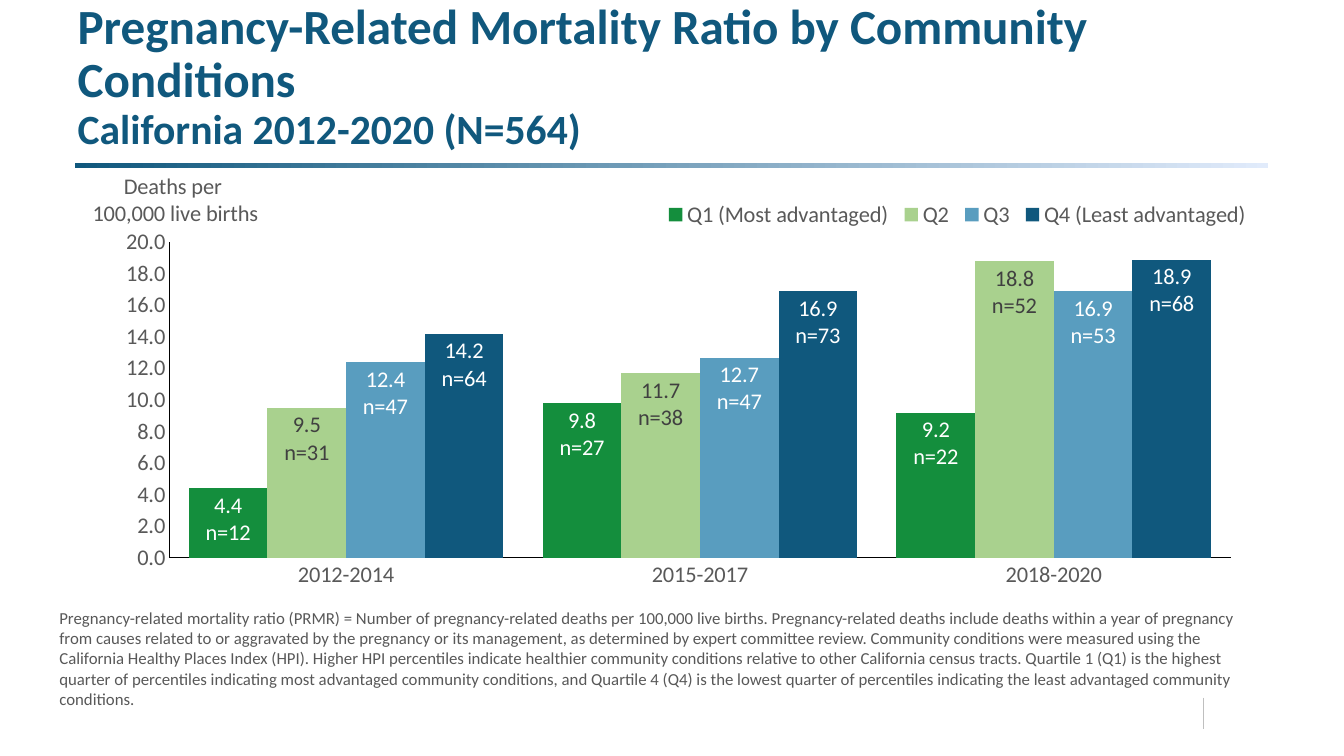
from lxml import etree
from pptx import Presentation
from pptx.chart.data import CategoryChartData
from pptx.dml.color import RGBColor
from pptx.enum.chart import XL_CHART_TYPE, XL_LABEL_POSITION, XL_LEGEND_POSITION, XL_TICK_MARK
from pptx.enum.shapes import MSO_CONNECTOR, MSO_SHAPE
from pptx.enum.text import MSO_ANCHOR, MSO_AUTO_SIZE, PP_ALIGN
from pptx.oxml.ns import qn
from pptx.util import Inches, Pt

FONT = "Calibri"
NAVY = RGBColor(0x10, 0x58, 0x7D)
PALE_BLUE = RGBColor(0xE1, 0xEB, 0xFB)
GREEN = RGBColor(0x14, 0x8E, 0x3D)
LIGHT_GREEN = RGBColor(0xA9, 0xD1, 0x8E)
BLUE = RGBColor(0x59, 0x9D, 0xBF)
WHITE = RGBColor(0xFF, 0xFF, 0xFF)
BLACK = RGBColor(0, 0, 0)
DARK_GRAY = RGBColor(0x40, 0x40, 0x40)
NOTE_GRAY = RGBColor(0x58, 0x58, 0x58)
AXIS_GRAY = RGBColor(0x59, 0x59, 0x59)
RULE_GRAY = RGBColor(0xBF, 0xBF, 0xBF)

# Content
TITLE = "Pregnancy-Related Mortality Ratio by Community Conditions "
SUBTITLE = "California 2012-2020 (N=564)"
AXIS_TITLE = ["Deaths per ", "100,000 live births"]
PERIODS = ["2012-2014", "2015-2017", "2018-2020"]
# name, ratios, death counts, bar colour, label colour
QUARTILES = [
    ("Q1 (Most advantaged)", [4.4, 9.8, 9.2], [12, 27, 22], GREEN, WHITE),
    ("Q2", [9.5, 11.7, 18.8], [31, 38, 52], LIGHT_GREEN, DARK_GRAY),
    ("Q3", [12.4, 12.7, 16.9], [47, 47, 53], BLUE, WHITE),
    ("Q4 (Least advantaged)", [14.2, 16.9, 18.9], [64, 73, 68], NAVY, WHITE),
]
FOOTNOTE = (
    "Pregnancy-related mortality ratio (PRMR) = Number of pregnancy-related deaths per 100,000 "
    "live births. Pregnancy-related deaths include deaths within a year of pregnancy from causes "
    "related to or aggravated by the pregnancy or its management, as determined by expert "
    "committee review. Community conditions were measured using the California Healthy Places "
    "Index (HPI). Higher HPI percentiles indicate healthier community conditions relative to "
    "other California census tracts. Quartile 1 (Q1) is the highest quarter of percentiles "
    "indicating most advantaged community conditions, and Quartile 4 (Q4) is the lowest quarter "
    "of percentiles indicating the least advantaged community conditions."
)


def style(font, size, color, bold=False):
    font.name, font.size, font.bold = FONT, Pt(size), bold
    font.color.rgb = color


def add_run(paragraph, text, size, color, bold=False):
    run = paragraph.add_run()
    run.text = text
    style(run.font, size, color, bold)


def fill_lines(text_frame, lines, size, color):
    for index, line in enumerate(lines):
        paragraph = text_frame.add_paragraph() if index else text_frame.paragraphs[0]
        paragraph.alignment = PP_ALIGN.CENTER
        add_run(paragraph, line, size, color)


def set_layout(parent, index, inner=False, **fractions):
    """Place a chart part by fractions of the chart's width and height."""
    for old in parent.findall(qn("c:layout")):
        parent.remove(old)
    layout = etree.Element(qn("c:layout"))
    manual = etree.SubElement(layout, qn("c:manualLayout"))
    settings = [("layoutTarget", "inner")] if inner else []
    settings += [("xMode", "edge"), ("yMode", "edge")] + list(fractions.items())
    for name, value in settings:
        etree.SubElement(manual, qn("c:" + name)).set("val", str(value))
    parent.insert(index, layout)


def add_title(slide):
    title = slide.shapes.title
    title.left, title.top = Inches(0.67), Inches(0.36)
    title.width, title.height = Inches(12.09), Inches(1.21)
    frame = title.text_frame
    frame.word_wrap = True
    frame.auto_size = MSO_AUTO_SIZE.NONE
    frame.vertical_anchor = MSO_ANCHOR.BOTTOM
    paragraph = frame.paragraphs[0]
    paragraph.alignment = PP_ALIGN.LEFT
    paragraph.line_spacing = 0.9
    add_run(paragraph, TITLE, 35.1, NAVY, True)
    paragraph.add_line_break()
    add_run(paragraph, SUBTITLE, 29.7, NAVY, True)


def add_rules(slide):
    bar = slide.shapes.add_shape(
        MSO_SHAPE.RECTANGLE, Inches(0.74), Inches(1.62), Inches(11.84), Inches(0.05))
    bar.shadow.inherit = False
    bar.line.fill.background()
    bar.fill.gradient()
    bar.fill.gradient_angle = 0
    for stop, color in zip(bar.fill.gradient_stops, (NAVY, PALE_BLUE)):
        stop.color.rgb = color
    divider = slide.shapes.add_connector(
        MSO_CONNECTOR.STRAIGHT, Inches(11.94), Inches(6.92), Inches(11.94), Inches(7.23))
    divider.line.color.rgb = RULE_GRAY
    divider.line.width = Pt(0.5)
    etree.SubElement(divider.element.spPr, qn("a:effectLst"))


def add_footnote(slide):
    box = slide.shapes.add_textbox(Inches(0.49), Inches(5.98), Inches(12.09), Inches(0.91))
    box.text_frame.word_wrap = True
    add_run(box.text_frame.paragraphs[0], FOOTNOTE, 12, NOTE_GRAY)


def add_ratio_chart(slide):
    data = CategoryChartData(number_format="0.0")
    data.categories = PERIODS
    for name, ratios, *_ in QUARTILES:
        data.add_series(name, ratios)
    chart = slide.shapes.add_chart(
        XL_CHART_TYPE.COLUMN_CLUSTERED, Inches(0.77), Inches(1.63),
        Inches(11.79), Inches(4.35), data).chart
    style(chart.font, 16, BLACK)
    chart.has_title = False
    plot = chart.plots[0]
    plot.gap_width, plot.overlap, plot.vary_by_categories = 50, 0, False
    plot_area = chart.element.find(".//" + qn("c:plotArea"))
    set_layout(plot_area, 0, inner=True, x=0.077, y=0.178, w=0.893, h=0.72)

    # Bars and their two-line labels
    for series, (_, ratios, counts, bar_color, label_color) in zip(plot.series, QUARTILES):
        series.format.fill.solid()
        series.format.fill.fore_color.rgb = bar_color
        labels = series.data_labels
        labels.show_value = True
        labels.number_format, labels.number_format_is_linked = "0.0", False
        labels.position = XL_LABEL_POSITION.INSIDE_END
        style(labels.font, 16, label_color)
        for index, (ratio, count) in enumerate(zip(ratios, counts)):
            label = series.points[index].data_label
            fill_lines(label.text_frame, [f"{ratio:.1f}", f"n={count}"], 16, label_color)
            label.position = XL_LABEL_POSITION.INSIDE_END

    # Axes
    for axis in (chart.category_axis, chart.value_axis):
        axis.has_major_gridlines = False
        axis.major_tick_mark = axis.minor_tick_mark = XL_TICK_MARK.NONE
        style(axis.tick_labels.font, 16, AXIS_GRAY)
        axis.format.line.color.rgb = BLACK
        axis.format.line.width = Pt(0.75)
    value_axis = chart.value_axis
    value_axis.minimum_scale, value_axis.maximum_scale, value_axis.major_unit = 0, 20, 2
    value_axis.tick_labels.number_format = "0.0"
    value_axis.tick_labels.number_format_is_linked = False
    fill_lines(value_axis.axis_title.text_frame, AXIS_TITLE, 16, AXIS_GRAY)
    axis_title = chart.element.find(".//" + qn("c:valAx") + "/" + qn("c:title"))
    body = axis_title.find(".//" + qn("a:bodyPr"))
    body.set("rot", "0")
    body.set("vert", "horz")
    set_layout(axis_title, 1, x=0.01, y=0.01)

    # Legend
    chart.has_legend = True
    legend = chart.legend
    legend.position = XL_LEGEND_POSITION.TOP
    legend.include_in_layout = False
    style(legend.font, 16, AXIS_GRAY)
    set_layout(chart.element.find(".//" + qn("c:legend")), 1, x=0.49, y=0.07, w=0.5, h=0.09)


def main():
    presentation = Presentation()
    presentation.slide_width, presentation.slide_height = Inches(13.33), Inches(7.5)
    slide = presentation.slides.add_slide(presentation.slide_layouts[5])
    add_rules(slide)
    add_title(slide)
    add_footnote(slide)
    add_ratio_chart(slide)
    presentation.save("out.pptx")


if __name__ == "__main__":
    main()
